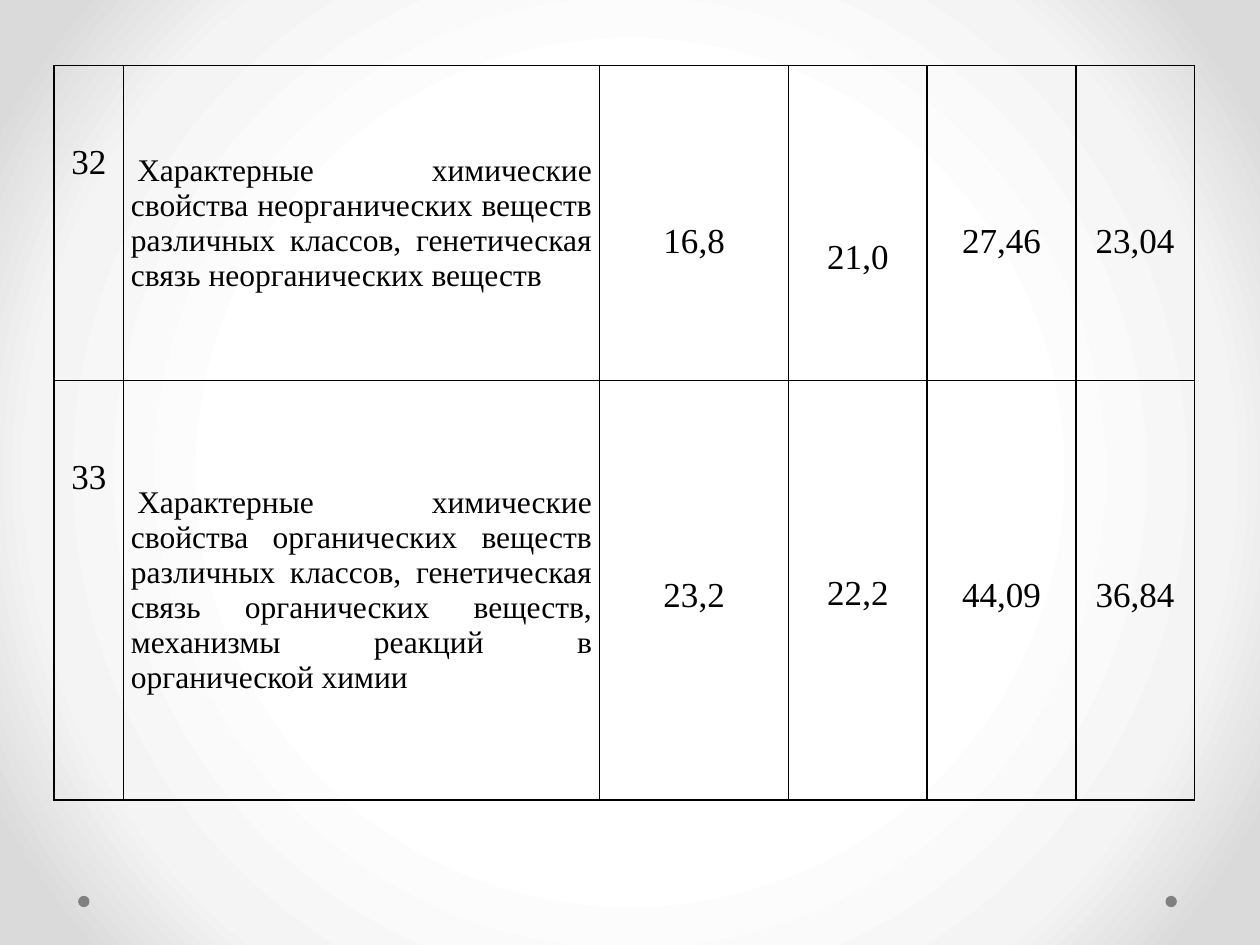
import pptx
import pptx.dml.color
import pptx.enum.shapes
import pptx.enum.text
import pptx.oxml
import pptx.oxml.ns
import pptx.util

WIDTH, HEIGHT = pptx.util.Inches(10), pptx.util.Inches(7.5)
COLORS = {"ink": "000000", "dot": "808080",
          "center": "FFFFFF", "ring": "F4F4F4", "corner": "DADADA"}
FONT = "Times New Roman"
LINE = 0.31  # height of one 20 pt text line, inches
COLUMNS = [0.55, 3.78, 1.5, 1.1, 1.18, 0.94]
ROWS = [2.5, 3.33]

ALIGN = pptx.enum.text.PP_ALIGN
ANCHOR = pptx.enum.text.MSO_ANCHOR
NUMBER = {"alignment": ALIGN.CENTER}
TOPIC = {"alignment": ALIGN.JUSTIFY}
SPACED = {"alignment": ALIGN.CENTER, "line_spacing": 1.15,
          "space_after": pptx.util.Pt(10)}

# Each cell: text, paragraph format, size, anchor, lines of space above
RESULTS = [
    [("32", NUMBER, 20, ANCHOR.TOP, 2),
     ("Характерные химические свойства неорганических веществ различных "
      "классов, генетическая связь неорганических веществ",
      TOPIC, 18, ANCHOR.MIDDLE, 0),
     ("16,8", NUMBER, 20, ANCHOR.TOP, 4),
     ("21,0", SPACED, 20, ANCHOR.MIDDLE, 1.6),
     ("27,46", NUMBER, 20, ANCHOR.TOP, 4),
     ("23,04", NUMBER, 20, ANCHOR.TOP, 4)],
    [("33", NUMBER, 20, ANCHOR.TOP, 2),
     ("Характерные химические свойства органических веществ различных "
      "классов, генетическая связь органических веществ, механизмы реакций "
      "в органической химии", TOPIC, 18, ANCHOR.MIDDLE, 0),
     ("23,2", NUMBER, 20, ANCHOR.TOP, 5),
     ("22,2", SPACED, 20, ANCHOR.MIDDLE, 0),
     ("44,09", NUMBER, 20, ANCHOR.TOP, 5),
     ("36,84", NUMBER, 20, ANCHOR.TOP, 5)],
]


def rgb(name):
    return pptx.dml.color.RGBColor.from_string(COLORS[name])


def apply_format(target, values):
    for name, value in values.items():
        setattr(target, name, value)


def paint_background(page):
    """Fill the page with a radial gradient, light in the middle."""
    page.background.fill.gradient()
    stops = "".join(
        f'<a:gs pos="{share * 1000}"><a:srgbClr val="{COLORS[name]}"/></a:gs>'
        for share, name in ((50, "center"), (76, "ring"), (92, "corner")))
    gradient = pptx.oxml.parse_xml(
        f'<a:gradFill {pptx.oxml.ns.nsdecls("a")} rotWithShape="1">'
        f'<a:gsLst>{stops}</a:gsLst><a:path path="circle">'
        '<a:fillToRect l="50000" t="50000" r="50000" b="50000"/>'
        '</a:path></a:gradFill>')
    plain = page._element.find(".//" + pptx.oxml.ns.qn("a:gradFill"))
    plain.getparent().replace(plain, gradient)


def add_dot(page, left, top, size):
    dot = page.shapes.add_shape(
        pptx.enum.shapes.MSO_SHAPE.OVAL, left, top, size, size)
    dot.shadow.inherit = False
    dot.fill.solid()
    dot.fill.fore_color.rgb = rgb("dot")
    dot.line.fill.background()


def add_borders(cell):
    properties = cell._tc.get_or_add_tcPr()
    for position, side in enumerate(("lnL", "lnR", "lnT", "lnB")):
        properties.insert(position, pptx.oxml.parse_xml(
            f'<a:{side} {pptx.oxml.ns.nsdecls("a")} w="12700"><a:solidFill>'
            f'<a:srgbClr val="{COLORS["ink"]}"/></a:solidFill></a:{side}>'))


def fill_cell(cell, text, para_format, size, anchor, lines_above):
    side = pptx.util.Inches(0.06)
    apply_format(cell, {
        "margin_left": side, "margin_right": side, "margin_bottom": 0,
        "margin_top": pptx.util.Inches(lines_above * LINE),
        "vertical_anchor": anchor})
    cell.fill.background()
    add_borders(cell)
    para = cell.text_frame.paragraphs[0]
    apply_format(para, para_format)
    if para_format is TOPIC:
        para._p.get_or_add_pPr().set("indent", str(pptx.util.Inches(0.05)))
    span = para.add_run()
    span.text = text
    apply_format(span.font, {"name": FONT, "size": pptx.util.Pt(size)})
    span.font.color.rgb = rgb("ink")


def add_results_table(page, left, top, width, height):
    table = page.shapes.add_table(
        len(ROWS), len(COLUMNS), left, top, width, height).table
    apply_format(table, {"first_row": False, "horz_banding": False})
    for column, share in zip(table.columns, COLUMNS):
        column.width = int(width * share / sum(COLUMNS))
    for row, share in zip(table.rows, ROWS):
        row.height = int(height * share / sum(ROWS))
    for row, contents in zip(table.rows, RESULTS):
        for cell, content in zip(row.cells, contents):
            fill_cell(cell, *content)


def main():
    deck = pptx.Presentation()
    apply_format(deck, {"slide_width": WIDTH, "slide_height": HEIGHT})
    page = deck.slides.add_slide(deck.slide_layouts[6])
    paint_background(page)
    for left in (0.925, 0.062):
        add_dot(page, int(WIDTH * left), int(HEIGHT * 0.948),
                pptx.util.Inches(0.09))
    add_results_table(page, pptx.util.Inches(0.43), pptx.util.Inches(0.52),
                      pptx.util.Inches(sum(COLUMNS)),
                      pptx.util.Inches(sum(ROWS)))
    deck.save("out.pptx")


if __name__ == "__main__":
    main()
